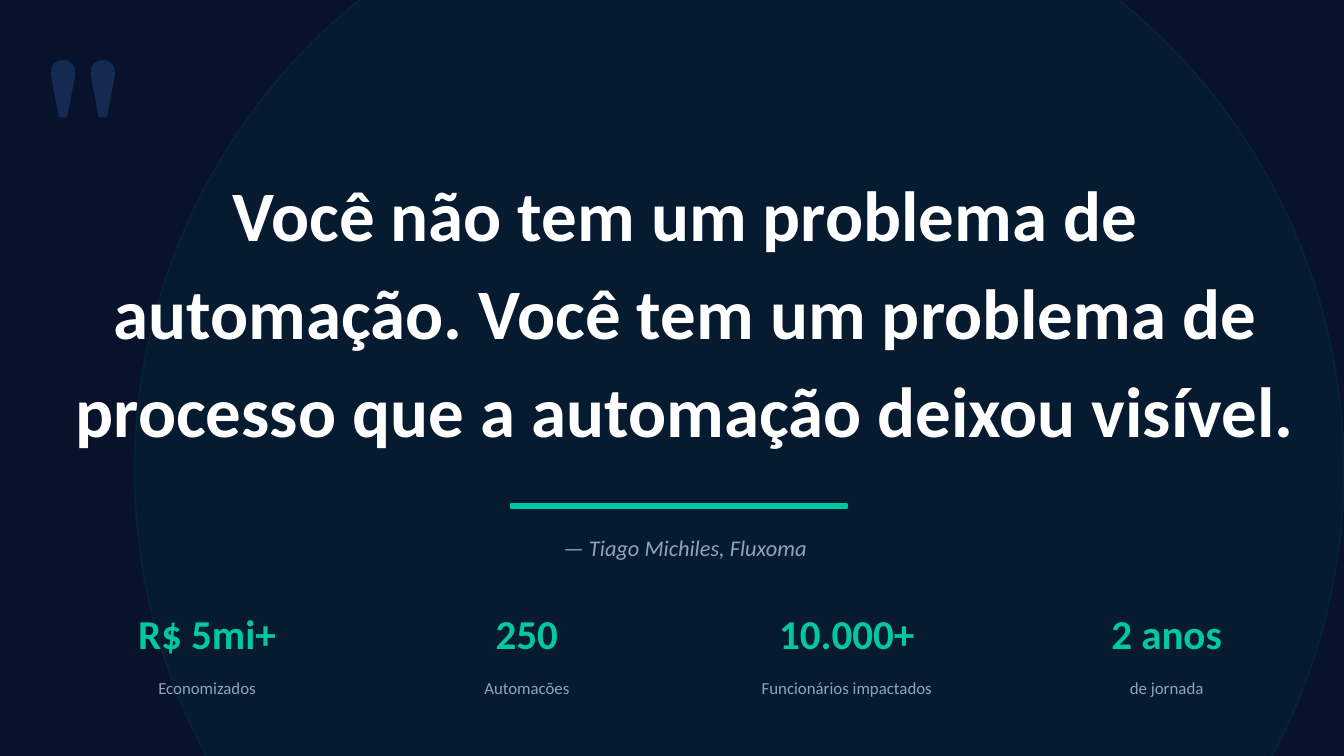
import pptx
import pptx.util
import pptx.dml.color
import pptx.enum.shapes
import pptx.enum.text
import pptx.oxml
import pptx.oxml.ns

Inches = pptx.util.Inches
Pt = pptx.util.Pt
Shape = pptx.enum.shapes.MSO_SHAPE
Align = pptx.enum.text.PP_ALIGN

HUES = {"night": "08122A", "mint": "00C8A0", "navy": "152A52",
        "white": "FFFFFF", "mist": "8FA3BF"}
MARK = '"'
QUOTE = ("Você não tem um problema de automação. Você tem um problema "
         "de processo que a automação deixou visível.")
AUTHOR = "— Tiago Michiles, Fluxoma"
STATS = [("R$ 5mi+", "Economizados"), ("250", "Automacões"),
         ("10.000+", "Funcionários impactados"), ("2 anos", "de jornada")]
STYLES = {
    "mark": {"size": Pt(96), "bold": True, "name": "TeX Gyre Schola", "hue": "navy"},
    "quote": {"size": Pt(38), "bold": True, "hue": "white"},
    "author": {"size": Pt(12), "italic": True, "hue": "mist"},
    "value": {"size": Pt(22), "bold": True, "hue": "mint"},
    "label": {"size": Pt(9), "hue": "mist"},
}
WIDE = 10
HIGH = WIDE * 9 / 16
LEFT, COL, GAP = 0.45, 2.18, 0.2
ROWS = [("value", 4.42, 0.58), ("label", 4.98, 0.28)]
SPAN = (0.55, WIDE * 0.91)


def color(hue):
    return pptx.dml.color.RGBColor.from_string(HUES[hue])


def fade(fill, share):
    tint = fill._xPr.find(".//" + pptx.oxml.ns.qn("a:srgbClr"))
    alpha = pptx.oxml.parse_xml(
        '<a:alpha xmlns:a="http://schemas.openxmlformats.org/drawingml/2006/main"'
        f' val="{share * 1000}"/>')
    tint.append(alpha)


def draw(slide, kind, box, hue, share=100):
    shape = slide.shapes.add_shape(kind, *map(Inches, box))
    shape.shadow.inherit = False
    shape.line.width = Pt(1)
    for fill in (shape.fill, shape.line.fill):
        fill.solid()
        fill.fore_color.rgb = color(hue)
        if share < 100:
            fade(fill, share)


def write(slide, text, style, box, align=Align.CENTER, pitch=None):
    frame = slide.shapes.add_textbox(*map(Inches, box)).text_frame
    setup = {"word_wrap": True, "margin_left": 0, "margin_right": 0,
             "margin_top": 0, "margin_bottom": 0,
             "vertical_anchor": pptx.enum.text.MSO_ANCHOR.MIDDLE}
    for key, value in setup.items():
        setattr(frame, key, value)
    para = frame.paragraphs[0]
    para.alignment = align
    para.line_spacing = pitch
    run = para.add_run()
    run.text = text
    looks = {"name": "Calibri", **STYLES[style]}
    run.font.color.rgb = color(looks.pop("hue"))
    for key, value in looks.items():
        setattr(run.font, key, value)


def main():
    deck = pptx.Presentation()
    deck.slide_width, deck.slide_height = Inches(WIDE), Inches(HIGH)
    slide = deck.slides.add_slide(deck.slide_layouts[6])
    back = slide.background.fill
    back.solid()
    back.fore_color.rgb = color("night")

    left, width = SPAN
    disc = WIDE * 0.9
    draw(slide, Shape.OVAL, (WIDE - disc, -1, disc, disc), "mint", 5)
    write(slide, MARK, "mark", (0.4, 0.3, 2, 1.2), Align.LEFT)
    write(slide, QUOTE, "quote", (left, 1.56, width, 1.42), pitch=1.15)
    draw(slide, Shape.RECTANGLE, (3.8, 3.75, WIDE / 4, 0.03), "mint")
    write(slide, AUTHOR, "author", (left, 3.9, width, 0.35))

    for col, stat in enumerate(STATS):
        x = LEFT + col * (COL + GAP)
        for text, (style, top, tall) in zip(stat, ROWS):
            write(slide, text, style, (x, top, COL, tall))
    deck.save("out.pptx")


if __name__ == "__main__":
    main()
